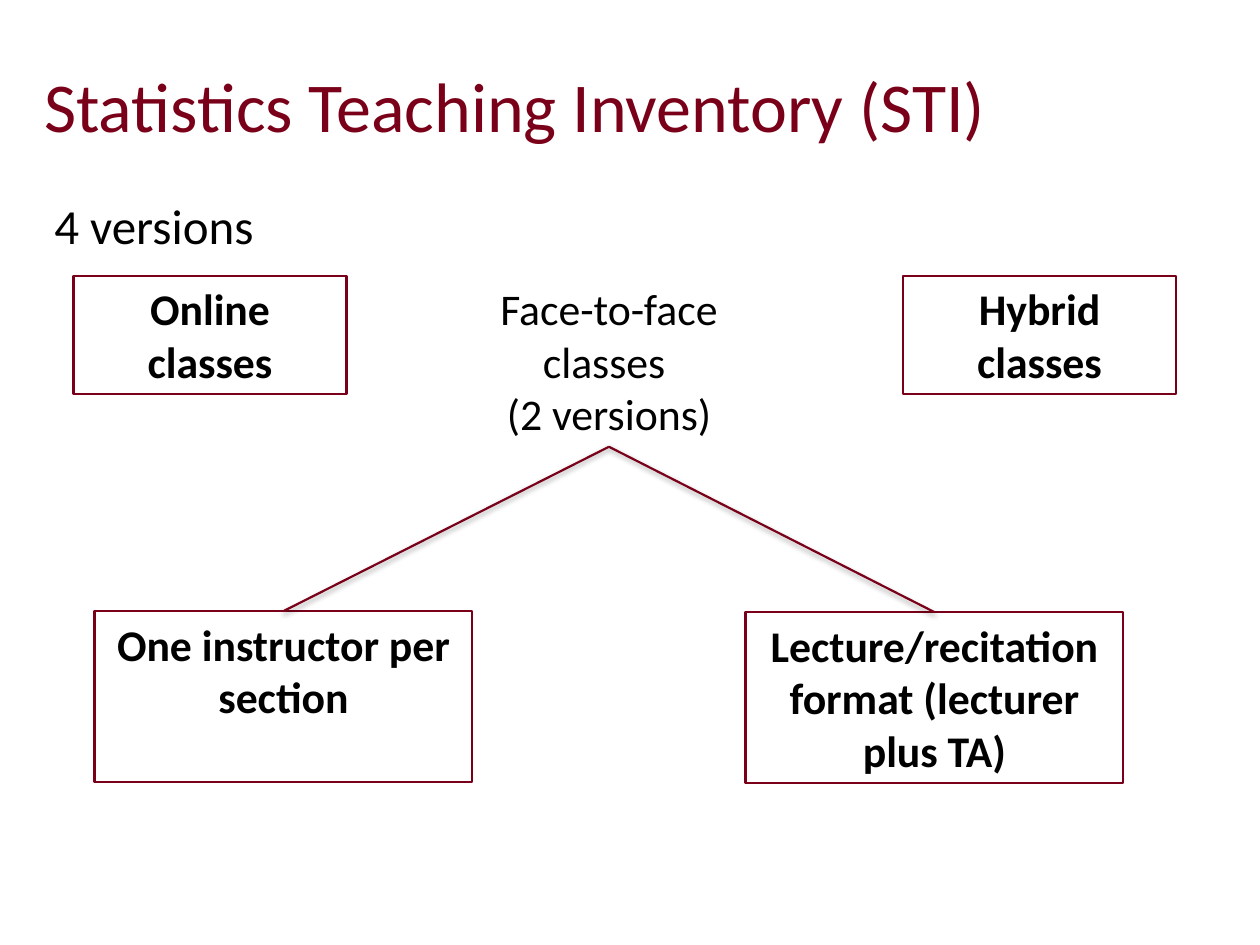
from dataclasses import dataclass

import pptx
import pptx.dml.color
import pptx.enum.shapes
import pptx.enum.text
import pptx.oxml
import pptx.util
from pptx.enum.text import MSO_ANCHOR, PP_ALIGN

CELL = 1 / 12  # inches; the slide is a grid of 120 columns by 90 rows
MAROON, BLACK = "7A0019", "000000"
LINE_WIDTH = 1.25
SHADOW = (
    '<a:effectLst xmlns:a="http://schemas.openxmlformats.org/drawingml/2006/main">'
    '<a:outerShdw blurRad="40000" dist="20000" dir="5400000" rotWithShape="0">'
    '<a:srgbClr val="000000"><a:alpha val="38000"/></a:srgbClr>'
    "</a:outerShdw></a:effectLst>"
)


@dataclass(frozen=True)
class Area:
    column: float
    row: float
    columns: float
    rows: float

    def lengths(self) -> list[pptx.util.Length]:
        return [cells(n) for n in (self.column, self.row, self.columns, self.rows)]

    def top_middle(self) -> tuple[float, float]:
        return self.column + self.columns / 2, self.row

    def bottom_middle(self) -> tuple[float, float]:
        return self.column + self.columns / 2, self.row + self.rows


@dataclass(frozen=True)
class Version:
    label: str
    area: Area


TITLE = Area(3, 5, 117, 10)
SUBTITLE = Area(4, 18, 114, 9)
FACE_TO_FACE = Area(45, 26.25, 26, 16.3)
CLASS_TYPES = [
    Version("Online classes", Area(7, 26.25, 26, 11.25)),
    Version("Hybrid classes", Area(86, 26.25, 26, 11.25)),
]
FORMATS = [
    Version("Lecture/recitation format (lecturer plus TA)", Area(71, 58.3, 36, 16.3)),
    Version("One instructor per section", Area(9, 58.2, 36, 16.3)),
]


def cells(count: float) -> pptx.util.Length:
    return pptx.util.Inches(count * CELL)


def colour(value: str) -> pptx.dml.color.RGBColor:
    return pptx.dml.color.RGBColor.from_string(value)


def write(shape, text: str, *, size: float, fill: str = BLACK, bold: bool = False,
          align=PP_ALIGN.CENTER, anchor=MSO_ANCHOR.TOP) -> None:
    frame = shape.text_frame
    frame.text = text
    frame.word_wrap = True
    frame.auto_size = pptx.enum.text.MSO_AUTO_SIZE.NONE
    frame.vertical_anchor = anchor
    for para in frame.paragraphs:
        para.alignment = align
        for span in para.runs:
            span.font.name = "Calibri"
            span.font.size = pptx.util.Pt(size)
            span.font.bold = bold
            span.font.color.rgb = colour(fill)


def outline(line) -> None:
    line.color.rgb = colour(MAROON)
    line.width = pptx.util.Pt(LINE_WIDTH)


def add_version(page, version: Version) -> None:
    box = page.shapes.add_shape(
        pptx.enum.shapes.MSO_SHAPE.RECTANGLE, *version.area.lengths())
    box.shadow.inherit = False
    box.fill.background()
    outline(box.line)
    write(box, version.label, size=25, bold=True)


def add_branch(page, start: Area, end: Area) -> None:
    ends = [cells(n) for n in (*start.bottom_middle(), *end.top_middle())]
    branch = page.shapes.add_connector(pptx.enum.shapes.MSO_CONNECTOR.STRAIGHT, *ends)
    outline(branch.line)
    branch.element.spPr.append(pptx.oxml.parse_xml(SHADOW))


def main() -> None:
    deck = pptx.Presentation()
    deck.slide_width, deck.slide_height = cells(120), cells(90)
    page = deck.slides.add_slide(deck.slide_layouts.get_by_name("Title Only"))

    title = page.shapes.title
    title.left, title.top, title.width, title.height = TITLE.lengths()
    write(title, "Statistics Teaching Inventory (STI)", size=40, fill=MAROON,
          align=PP_ALIGN.LEFT, anchor=MSO_ANCHOR.MIDDLE)
    write(page.shapes.add_textbox(*SUBTITLE.lengths()), "4 versions", size=28,
          align=PP_ALIGN.LEFT)
    write(page.shapes.add_textbox(*FACE_TO_FACE.lengths()),
          "Face-to-face classes \n(2 versions)", size=25)

    for version in CLASS_TYPES + FORMATS:
        add_version(page, version)
    for version in FORMATS:
        add_branch(page, FACE_TO_FACE, version.area)

    deck.save("out.pptx")


if __name__ == "__main__":
    main()
